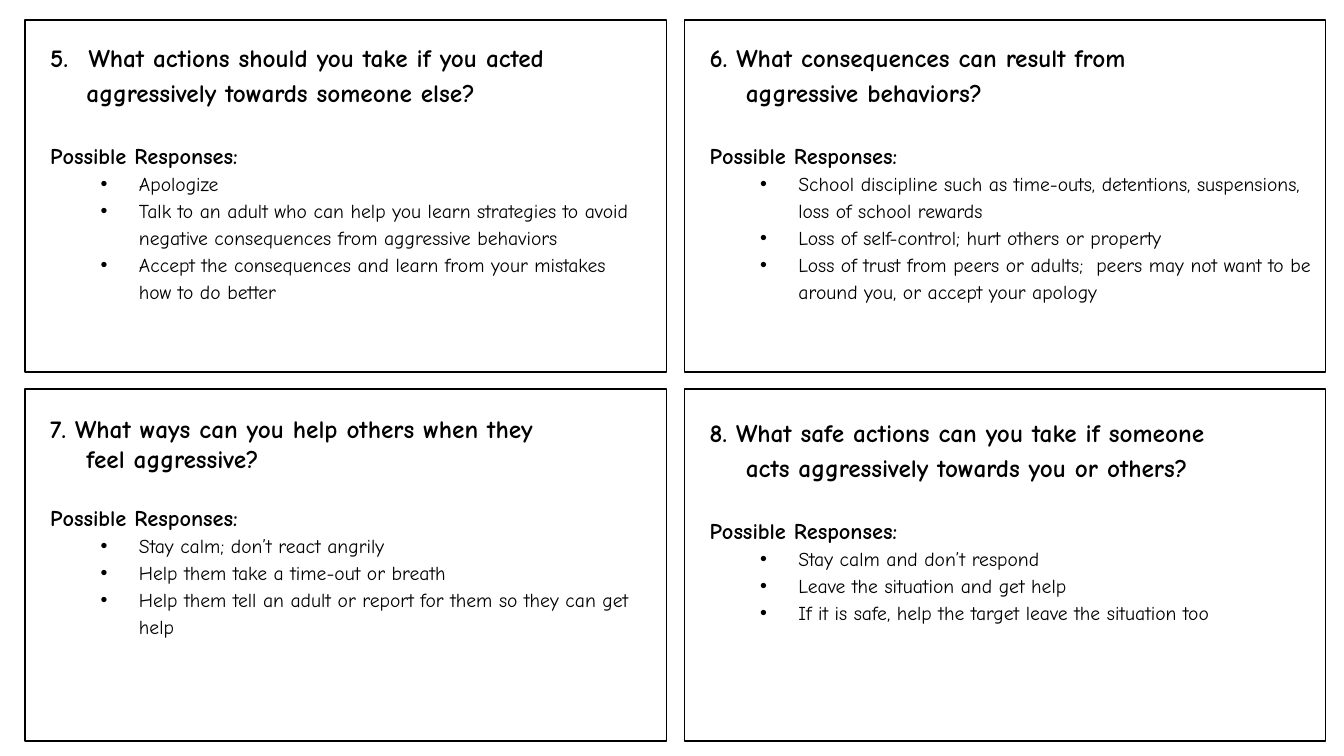
from dataclasses import dataclass

from lxml import etree
from pptx import Presentation
from pptx.dml.color import RGBColor
from pptx.enum.shapes import MSO_SHAPE
from pptx.enum.text import MSO_ANCHOR, MSO_AUTO_SIZE, PP_ALIGN
from pptx.oxml.ns import qn
from pptx.util import Inches, Pt

RECT = MSO_SHAPE.RECTANGLE
TOP = MSO_ANCHOR.TOP
GROW = MSO_AUTO_SIZE.SHAPE_TO_FIT_TEXT
LEFT = PP_ALIGN.LEFT

COLORS = {"card": "FFFFFF", "ink": "000000"}
FONT = "Comic Neue"
CARD_W, CARD_H = 6.36, 3.49
CARD_LEFT, CARD_TOP = 0.25, 0.2
STEP_X, STEP_Y = 6.54, 3.66
TEXT_INSET = 0.15
TEXT_TOPS = (0.33, 4.05)
WRAP_INDENT = 0.36
HANG = 0.38
BULLET_INDENT = 0.88
RESPONSES_GAP = 21.5
LOOSE = 1.15

FORMATS = {
    "question": {"size": Pt(18), "bold": True},
    "label": {"size": Pt(16), "bold": True},
    "response": {"size": Pt(14), "bold": False},
}


@dataclass(frozen=True)
class Card:
    question: tuple[str, str]
    responses: tuple[str, ...]
    height: float
    width: float = 6.07
    spacing: float = LOOSE
    number: int | None = None


CARDS = (
    Card(
        ("What actions should you take if you acted",
         "aggressively towards someone else?"),
        ("Apologize",
         "Talk to an adult who can help you learn strategies to avoid "
         "negative consequences from aggressive behaviors",
         "Accept the consequences and learn from your mistakes how to do better"),
        height=2.77, number=5,
    ),
    Card(
        ("6. What consequences can result from", "aggressive behaviors?"),
        ("School discipline such as time-outs, detentions, suspensions, "
         "loss of school rewards",
         "Loss of self-control; hurt others or property",
         "Loss of trust from peers or adults;  peers may not want to be "
         "around you, or accept your apology"),
        height=2.77, width=6.21,
    ),
    Card(
        ("7. What ways can you help others when they", "feel aggressive?"),
        ("Stay calm; don’t react angrily",
         "Help them take a time-out or breath",
         "Help them tell an adult or report for them so they can get help"),
        height=2.36, spacing=1.0,
    ),
    Card(
        ("8. What safe actions can you take if someone",
         "acts aggressively towards you or others?"),
        ("Stay calm and don’t respond",
         "Leave the situation and get help",
         "If it is safe, help the target leave the situation too"),
        height=2.23,
    ),
)


def rgb(name: str) -> RGBColor:
    return RGBColor.from_string(COLORS[name])


def add_line(tf, text: str, style: str, spacing: float, before: float = 0):
    p = tf.paragraphs[0]
    if p.runs:
        p = tf.add_paragraph()
    paragraph_format = {
        "alignment": LEFT,
        "line_spacing": spacing,
        "space_before": Pt(before),
        "space_after": Pt(0),
    }
    for name, value in paragraph_format.items():
        setattr(p, name, value)
    r = p.add_run()
    r.text = text
    for name, value in {"name": FONT, **FORMATS[style]}.items():
        setattr(r.font, name, value)
    r.font.color.rgb = rgb("ink")
    return p


def set_indent(p, left: float, first: float = 0) -> None:
    pPr = p._p.get_or_add_pPr()
    pPr.set("marL", str(Inches(left)))
    pPr.set("indent", str(Inches(first)))


def add_marker(p, tag: str, **attributes: str) -> None:
    pPr = p._p.get_or_add_pPr()
    if tag == "a:buChar":
        etree.SubElement(pPr, qn("a:buFont"), typeface="Arial")
    etree.SubElement(pPr, qn(tag), **attributes)


def add_frame(slide, col: int, row: int) -> None:
    sp = slide.shapes.add_shape(
        RECT,
        Inches(CARD_LEFT + col * STEP_X), Inches(CARD_TOP + row * STEP_Y),
        Inches(CARD_W), Inches(CARD_H),
    )
    sp.shadow.inherit = False
    sp.fill.solid()
    sp.fill.fore_color.rgb = rgb("card")
    sp.line.color.rgb = rgb("ink")
    sp.line.width = Pt(1)


def add_card_text(slide, card: Card, col: int, row: int) -> None:
    tb = slide.shapes.add_textbox(
        Inches(CARD_LEFT + TEXT_INSET + col * STEP_X), Inches(TEXT_TOPS[row]),
        Inches(card.width), Inches(card.height),
    )
    tf = tb.text_frame
    for name, value in {"word_wrap": True, "auto_size": GROW,
                        "vertical_anchor": TOP}.items():
        setattr(tf, name, value)

    opening, ending = card.question
    p = add_line(tf, opening, "question", card.spacing)
    if card.number is not None:
        set_indent(p, HANG, -HANG)
        add_marker(p, "a:buAutoNum", type="arabicPeriod", startAt=str(card.number))
    p = add_line(tf, ending, "question", card.spacing)
    set_indent(p, WRAP_INDENT)

    add_line(tf, "Possible Responses:", "label", card.spacing, RESPONSES_GAP)
    for response in card.responses:
        p = add_line(tf, response, "response", LOOSE)
        p.level = 1
        set_indent(p, BULLET_INDENT, -HANG)
        add_marker(p, "a:buChar", char="•")


def main() -> None:
    prs = Presentation()
    prs.slide_width = Inches(13.33)
    prs.slide_height = Inches(7.5)
    s = prs.slides.add_slide(prs.slide_layouts[6])
    for i, card in enumerate(CARDS):
        row, col = divmod(i, 2)
        add_frame(s, col, row)
        add_card_text(s, card, col, row)
    prs.save("out.pptx")


if __name__ == "__main__":
    main()
